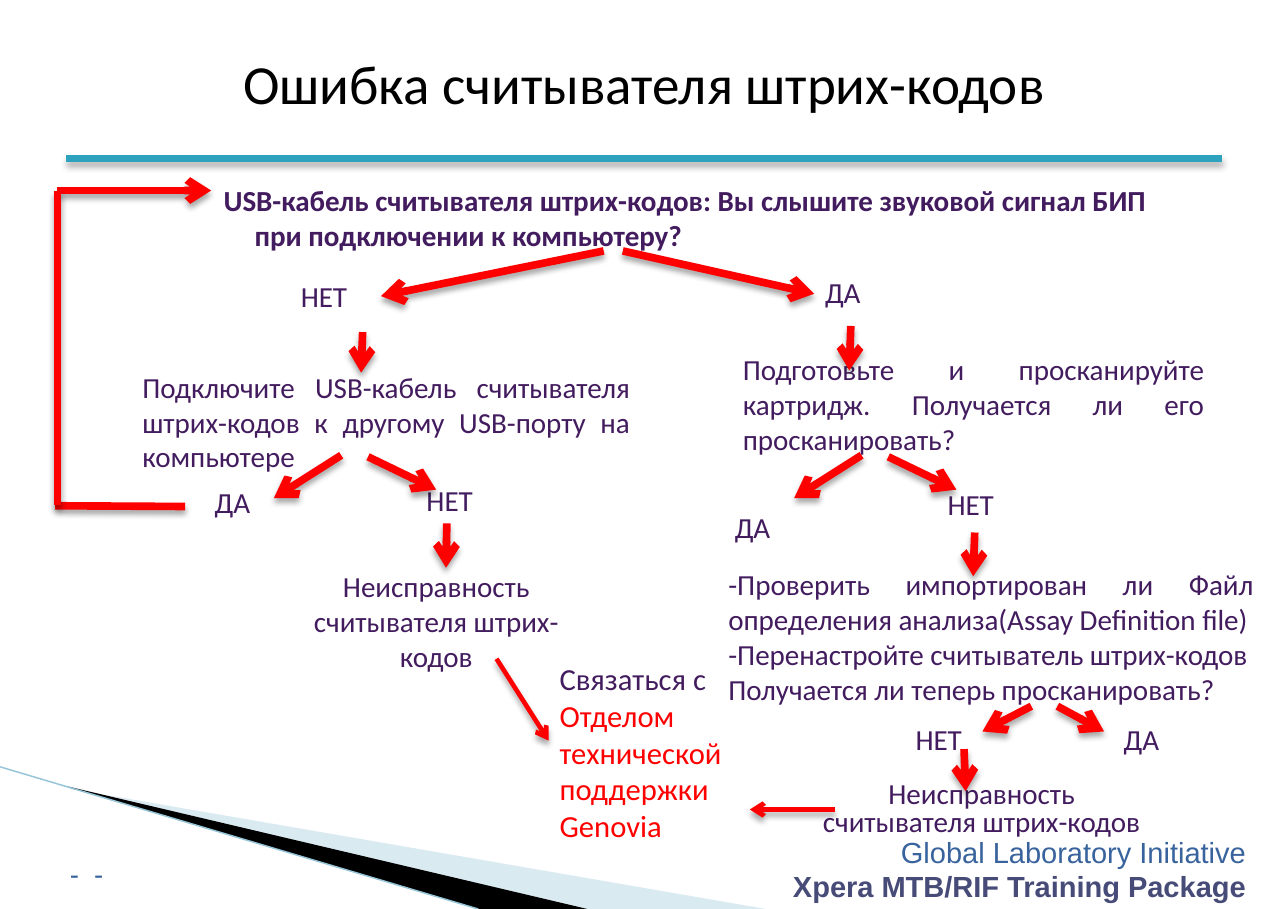
"""Build the barcode reader troubleshooting flowchart slide."""
from pptx import Presentation
from pptx.dml.color import RGBColor
from pptx.enum.shapes import MSO_CONNECTOR
from pptx.enum.text import MSO_ANCHOR, PP_ALIGN
from pptx.oxml import parse_xml
from pptx.oxml.ns import nsdecls, qn
from pptx.util import Pt

STRAIGHT = MSO_CONNECTOR.STRAIGHT
MIDDLE = MSO_ANCHOR.MIDDLE
LEFT, CENTER, RIGHT, JUSTIFY = PP_ALIGN.LEFT, PP_ALIGN.CENTER, PP_ALIGN.RIGHT, PP_ALIGN.JUSTIFY

BLACK = RGBColor(0x00, 0x00, 0x00)
RED = RGBColor(0xFF, 0x00, 0x00)
PURPLE = RGBColor(0x42, 0x1C, 0x5E)
TEAL = RGBColor(0x2D, 0xA2, 0xBF)
PALE_TEAL = RGBColor(0xA0, 0xCB, 0xDC)
EDGE_TEAL = RGBColor(0x97, 0xC5, 0xD8)
FOOTER_BLUE = RGBColor(0x39, 0x63, 0x9D)
FOOTER_INDIGO = RGBColor(0x47, 0x4B, 0x78)

BODY = {"name": "Calibri", "size": Pt(19), "bold": False}
FOOTER = {"name": "Arial", "size": Pt(19)}
SHADOW = (
    f'<a:effectLst {nsdecls("a")}><a:outerShdw blurRad="50800" dist="38100" dir="5400000" '
    'rotWithShape="0"><a:srgbClr val="000000"><a:alpha val="35000"/></a:srgbClr>'
    "</a:outerShdw></a:effectLst>"
)
NO_SHADOW = f'<a:effectLst {nsdecls("a")}/>'


def add_text(box, paragraphs, align, margins=(8, 4.3), wrap=True):
    frame = slide.shapes.add_textbox(*map(Pt, box)).text_frame
    side, edge = map(Pt, margins)
    settings = {"word_wrap": wrap, "margin_left": side, "margin_right": side,
                "margin_top": edge, "margin_bottom": edge}
    for name, value in settings.items():
        setattr(frame, name, value)
    for index, runs in enumerate(paragraphs):
        paragraph = frame.add_paragraph() if index else frame.paragraphs[0]
        paragraph.alignment = align
        for text, color, font_format in runs:
            run = paragraph.add_run()
            run.text = text
            run.font.color.rgb = color
            for name, value in font_format.items():
                setattr(run.font, name, value)
    return frame


def add_line(points, color=RED, width=5, head=True, effect=SHADOW):
    line = slide.shapes.add_connector(STRAIGHT, *map(Pt, points))
    line.line.color.rgb = color
    line.line.width = Pt(width)
    properties = line._element.spPr
    if head:
        properties.find(qn("a:ln")).append(parse_xml(f'<a:tailEnd {nsdecls("a")} type="arrow"/>'))
    properties.append(parse_xml(effect))


presentation = Presentation()
presentation.slide_width = Pt(841.68)
presentation.slide_height = Pt(594)
slide = presentation.slides.add_slide(presentation.slide_layouts[5])

wedges = [
    (PALE_TEAL, [(46, 515.5), (500.4, 594), (383.8, 594), (46, 514.8)]),
    (BLACK, [(44.6, 514), (383.8, 594), (313.2, 594), (45.4, 514.8)]),
]
for color, corners in wedges:
    outline = [(Pt(x), Pt(y)) for x, y in corners]
    builder = slide.shapes.build_freeform(*outline[0])
    builder.add_line_segments(outline[1:], close=True)
    wedge = builder.convert_to_shape()
    wedge.shadow.inherit = False
    wedge.fill.solid()
    wedge.fill.fore_color.rgb = color
    wedge.line.fill.background()
    if color == PALE_TEAL:
        tint = wedge._element.spPr.find(qn("a:solidFill"))[0]
        tint.append(parse_xml(f'<a:alpha {nsdecls("a")} val="40000"/>'))

add_line((0, 501.1, 312.5, 594), EDGE_TEAL, 0.95, False, NO_SHADOW)
add_line((43, 103.7, 798.5, 103.7), TEAL, 4.33, False)

add_text((509.8, 540.7, 312.5, 54), [
    [("Global Laboratory Initiative", FOOTER_BLUE, FOOTER)],
    [("Xpera MTB/RIF Training Package", FOOTER_INDIGO, {**FOOTER, "bold": True})],
], RIGHT, wrap=False)
page_mark = add_text((3.6, 555.8, 72, 33.8),
                     [[("- -", FOOTER_BLUE, {"name": "Arial", "size": Pt(18)})]], RIGHT)
page_mark.paragraphs[0].runs[0]._r.get_or_add_rPr().set("spc", "250")

title = slide.shapes.title
title_place = {"left": Pt(0), "top": Pt(0), "width": Pt(841.68), "height": Pt(107.3)}
for name, value in title_place.items():
    setattr(title, name, value)
title_frame = title.text_frame
title_frame.text = "Ошибка считывателя штрих-кодов"
title_layout = {"vertical_anchor": MIDDLE, "margin_left": 0, "margin_right": 0,
                "margin_top": 0, "margin_bottom": 0}
for name, value in title_layout.items():
    setattr(title_frame, name, value)
title_frame.paragraphs[0].alignment = CENTER
title_font = title_frame.paragraphs[0].runs[0].font
title_font.color.rgb = BLACK
for name, value in {"name": "Calibri", "size": Pt(36)}.items():
    setattr(title_font, name, value)

question = add_text((56.2, 115.2, 708.5, 105.8), [[(
    "USB-кабель считывателя штрих-кодов: Вы слышите звуковой сигнал БИП "
    "при подключении к компьютеру?", PURPLE, {**BODY, "bold": True})]], LEFT)
question_indent = question.paragraphs[0]._p.get_or_add_pPr()
question_indent.set("marL", str(Pt(102.2)))
question_indent.set("indent", str(Pt(-20.2)))

answers = [
    ("НЕТ", 161.3, 177.8), ("ДА", 500.4, 175),
    ("ДА", 101.5, 312.5), ("НЕТ", 243.4, 311),
    ("ДА", 441.4, 328.3), ("НЕТ", 584, 313.9),
    ("НЕТ", 563, 467.3), ("ДА", 695.5, 467.3),
]
for answer, left, top in answers:
    add_text((left, top, 100.8, 31), [[(answer, PURPLE, BODY)]], CENTER)

steps = [
    ((85, 236.9, 334.8, 77), JUSTIFY,
     ["Подключите USB-кабель считывателя штрих-кодов к другому USB-порту на компьютере"]),
    ((477.4, 225.4, 317.5, 77), JUSTIFY,
     ["Подготовьте и просканируйте картридж. Получается ли его просканировать?"]),
    ((177.1, 367.2, 216, 77), CENTER, ["Неисправность считывателя штрих-кодов"]),
    ((468, 365.8, 359.3, 100), JUSTIFY,
     ["-Проверить импортирован ли Файл определения анализа(Assay Definition file)",
      "-Перенастройте считыватель штрих-кодов",
      "Получается ли теперь просканировать?"]),
    ((522.7, 506.9, 237.6, 46), CENTER, ["Неисправность считывателя штрих-кодов"]),
]
for box, align, lines in steps:
    step = add_text(box, [[(line, PURPLE, BODY)] for line in lines], align)
step.paragraphs[0].line_spacing = 0.8

contact_font = {**BODY, "size": Pt(20)}
add_text((358.6, 427.7, 138.2, 128.2), [[
    ("Связаться с ", PURPLE, contact_font),
    ("Отделом технической поддержки Genovia", RED, contact_font),
]], LEFT, (7.2, 3.6))

arrows = [
    (394.5, 164, 249, 193.5), (407, 164, 532, 192),
    (237, 217, 236, 243.5), (556, 213, 555, 242),
    (292, 342, 291.5, 371), (637, 348, 636, 376.5),
    (674, 461.5, 642, 478), (691, 461.5, 721.5, 478),
    (630, 489.5, 631, 517), (37.5, 124.5, 138, 124.5),
]
for branch in (0, 340):
    arrows.append((223 + branch, 297.5, 179 + branch, 325.5))
    arrows.append((240.5 + branch, 298.5, 285 + branch, 320))
for points in arrows:
    add_line(points)
for return_path in [(121, 331, 36, 330.5), (37.5, 124.5, 37.5, 330)]:
    add_line(return_path, head=False)
for contact_arrow in [(324.5, 430.5, 358.5, 484), (546, 529, 490, 529)]:
    add_line(contact_arrow, width=3)

presentation.save("out.pptx")
